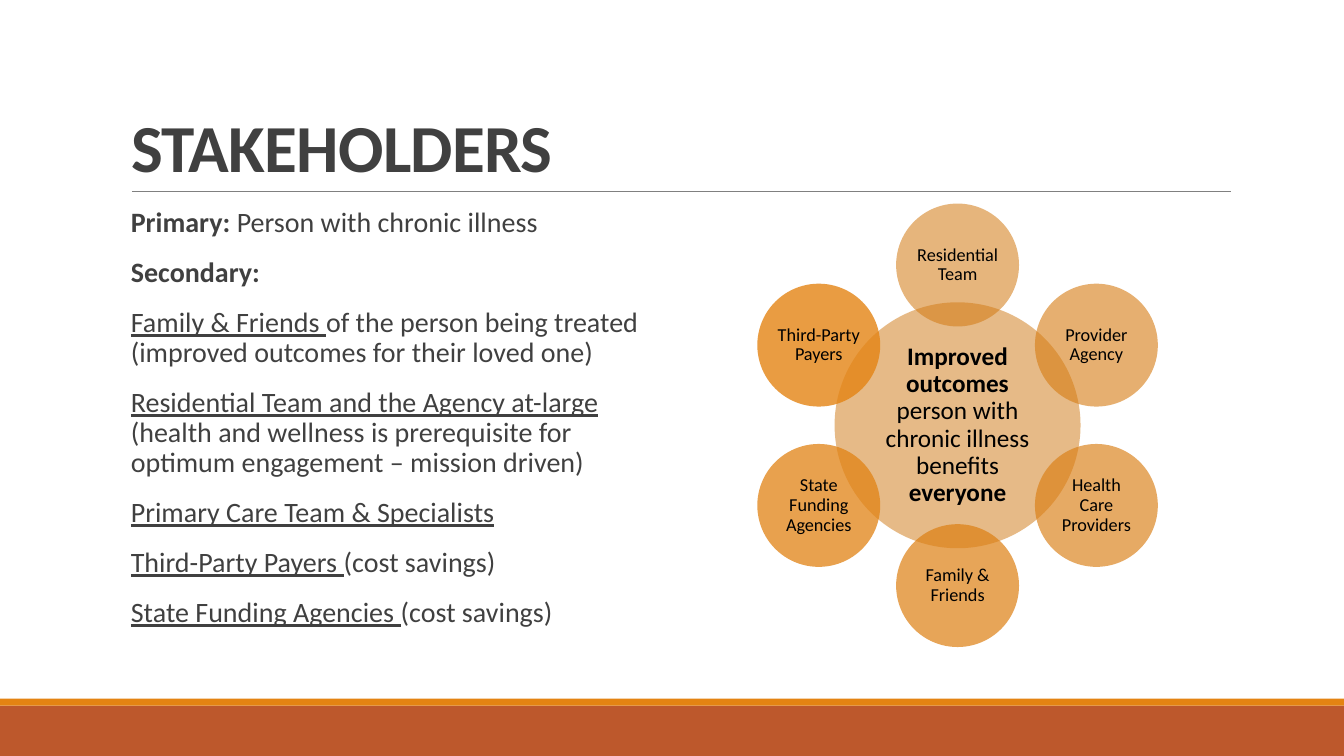
"""Build the stakeholders slide: a ranked list beside a radial diagram."""
from dataclasses import dataclass
from math import cos, radians, sin

from lxml.etree import SubElement
from pptx import Presentation
from pptx.dml.color import RGBColor
from pptx.enum.shapes import MSO_CONNECTOR as Connector, MSO_SHAPE as Preset
from pptx.enum.text import MSO_ANCHOR as Anchor, PP_ALIGN as Align
from pptx.oxml.ns import qn
from pptx.shapes.autoshape import Shape
from pptx.slide import Slide
from pptx.text.text import TextFrame
from pptx.util import Pt


@dataclass(frozen=True)
class Theme:
    font: str = "Calibri"
    text: str = "404040"
    diagram_text: str = "000000"
    rule: str = "808080"
    footer: str = "BD582C"
    accent: str = "E48312"
    title_size: float = 48
    body_size: float = 20
    hub_size: float = 18
    node_size: float = 13


@dataclass(frozen=True)
class Box:
    left: float
    top: float
    width: float
    height: float

    def lengths(self) -> tuple[Pt, Pt, Pt, Pt]:
        return Pt(self.left), Pt(self.top), Pt(self.width), Pt(self.height)


@dataclass(frozen=True)
class Run:
    text: str
    bold: bool = False
    underline: bool = False


@dataclass(frozen=True)
class Node:
    label: str
    color: str
    opacity: int


THEME = Theme()
WIDTH, HEIGHT = 960, 540
TITLE = Box(86.4, 22.3, 792, 114.5)
BODY = Box(86.4, 145.4, 388.8, 316.8)
BANDS = [(Box(0, 504, WIDTH, 36), THEME.footer), (Box(0, 499, WIDTH, 5), THEME.accent)]
CENTER_X, CENTER_Y, ORBIT = 684, 303.8, 114.5
HUB_DIAMETER, NODE_DIAMETER = 175.7, 87.8

STAKEHOLDERS = [
    [Run("Primary: ", bold=True), Run("Person with chronic illness")],
    [Run("Secondary:", bold=True)],
    [Run("Family & Friends ", underline=True),
     Run("of the person being treated (improved outcomes for their loved one)")],
    [Run("Residential Team and the Agency at-large ", underline=True),
     Run("(health and wellness is prerequisite for optimum engagement – mission driven)")],
    [Run("Primary Care Team & Specialists", underline=True)],
    [Run("Third-Party Payers ", underline=True), Run("(cost savings)")],
    [Run("State Funding Agencies ", underline=True), Run("(cost savings)")],
]
HUB_TEXT = [
    Run("Improved outcomes ", bold=True),
    Run("person with chronic illness benefits "),
    Run("everyone", bold=True),
]
NODES = [
    Node("Residential Team", "D27911", 55),
    Node("Provider Agency", "D67B11", 60),
    Node("Health Care Providers", "DA7D12", 65),
    Node("Family & Friends", "DD7F12", 70),
    Node("State Funding Agencies", "E18213", 75),
    Node("Third-Party Payers", "E48413", 80),
]


def write_text(frame: TextFrame, paragraphs: list[list[Run]], *, size: float, color: str,
               align: Align = Align.LEFT, anchor: Anchor = Anchor.TOP,
               margins: tuple[float, float] = (7.2, 3.6), line_spacing: float = 0.9,
               before: float = 0, after: float = 0, tracking: float = 0) -> None:
    frame.word_wrap = True
    frame.vertical_anchor = anchor
    frame.margin_left = frame.margin_right = Pt(margins[0])
    frame.margin_top = frame.margin_bottom = Pt(margins[1])
    for index, runs in enumerate(paragraphs):
        paragraph = frame.add_paragraph() if index else frame.paragraphs[0]
        paragraph.alignment = align
        paragraph.line_spacing = line_spacing
        paragraph.space_before, paragraph.space_after = Pt(before), Pt(after)
        for part in runs:
            run = paragraph.add_run()
            run.text = part.text
            font = run.font
            font.name, font.size = THEME.font, Pt(size)
            font.bold, font.underline = part.bold, part.underline
            font.color.rgb = RGBColor.from_string(color)
            if tracking:
                font._element.set("spc", str(round(tracking * 100)))


def add_filled(slide: Slide, preset: Preset, box: Box, color: str, opacity: int = 100) -> Shape:
    shape = slide.shapes.add_shape(preset, *box.lengths())
    shape.shadow.inherit = False
    shape.line.fill.background()
    shape.fill.solid()
    shape.fill.fore_color.rgb = RGBColor.from_string(color)
    if opacity < 100:
        fill_color = shape._element.spPr.find(qn("a:solidFill")).find(qn("a:srgbClr"))
        SubElement(fill_color, qn("a:alpha")).set("val", str(opacity * 1000))
    return shape


def add_circle(slide: Slide, x: float, y: float, diameter: float, color: str, opacity: int,
               runs: list[Run], size: float) -> None:
    box = Box(x - diameter / 2, y - diameter / 2, diameter, diameter)
    circle = add_filled(slide, Preset.OVAL, box, color, opacity)
    write_text(circle.text_frame, [runs], size=size, color=THEME.diagram_text,
               align=Align.CENTER, anchor=Anchor.MIDDLE, margins=(1.5, 1.5))


def add_rule(slide: Slide, left: float, right: float, y: float) -> None:
    rule = slide.shapes.add_connector(Connector.STRAIGHT, Pt(left), Pt(y), Pt(right), Pt(y))
    rule.line.color.rgb = RGBColor.from_string(THEME.rule)
    rule.line.width = Pt(0.5)
    SubElement(rule._element.spPr, qn("a:effectLst"))


def add_title(slide: Slide) -> None:
    title = slide.shapes.title
    title.left, title.top, title.width, title.height = TITLE.lengths()
    write_text(title.text_frame, [[Run("STAKEHOLDERS", bold=True)]], size=THEME.title_size,
               color=THEME.text, anchor=Anchor.BOTTOM, line_spacing=0.85, tracking=-0.5)


def add_diagram(slide: Slide) -> None:
    add_circle(slide, CENTER_X, CENTER_Y, HUB_DIAMETER, "CF7710", 50, HUB_TEXT, THEME.hub_size)
    for index, node in enumerate(NODES):
        angle = radians(360 / len(NODES) * index - 90)
        add_circle(slide, CENTER_X + ORBIT * cos(angle), CENTER_Y + ORBIT * sin(angle),
                   NODE_DIAMETER, node.color, node.opacity, [Run(node.label)], THEME.node_size)


def main() -> None:
    presentation = Presentation()
    presentation.slide_width, presentation.slide_height = Pt(WIDTH), Pt(HEIGHT)
    slide = presentation.slides.add_slide(presentation.slide_layouts[5])
    for box, color in BANDS:
        add_filled(slide, Preset.RECTANGLE, box, color)
    add_rule(slide, 94.3, 879.1, 136.8)
    add_title(slide)
    body = slide.shapes.add_textbox(*BODY.lengths())
    write_text(body.text_frame, STAKEHOLDERS, size=THEME.body_size, color=THEME.text,
               margins=(7.2, 3.6), before=12, after=2)
    add_diagram(slide)
    presentation.save("out.pptx")


if __name__ == "__main__":
    main()
